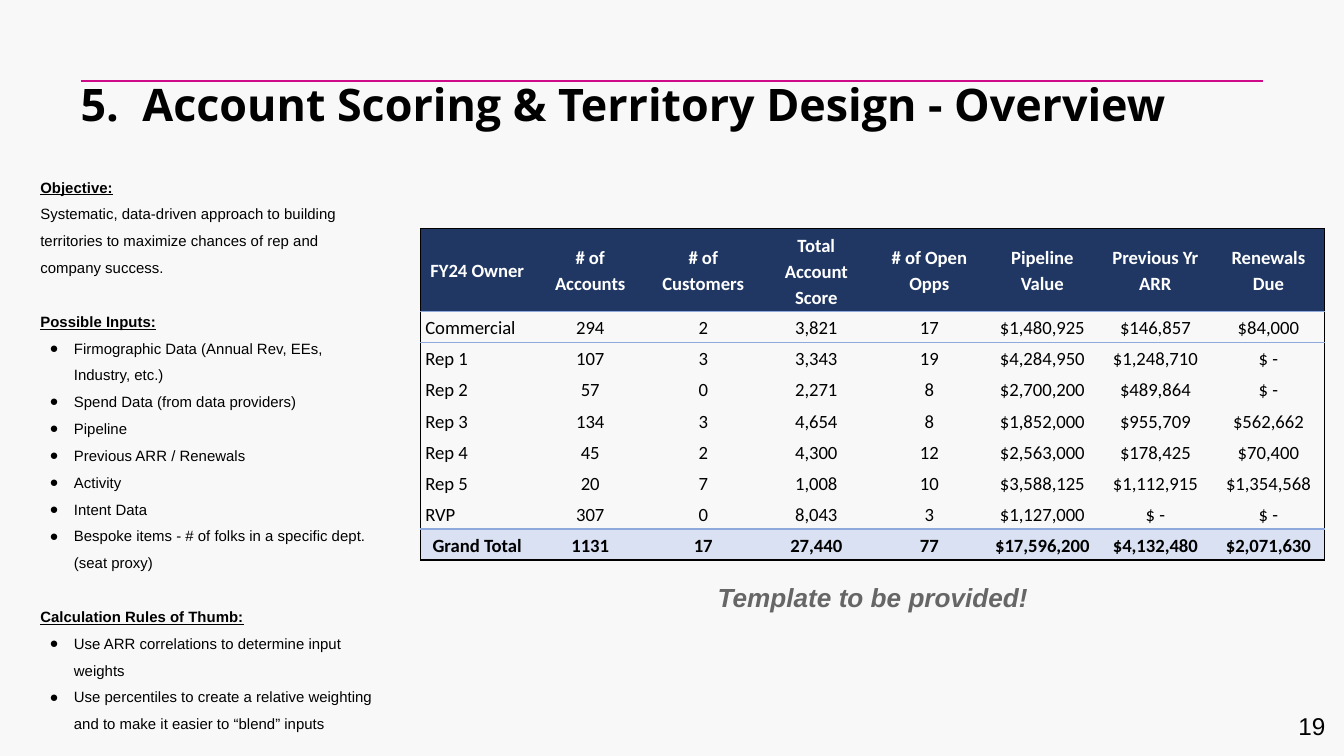
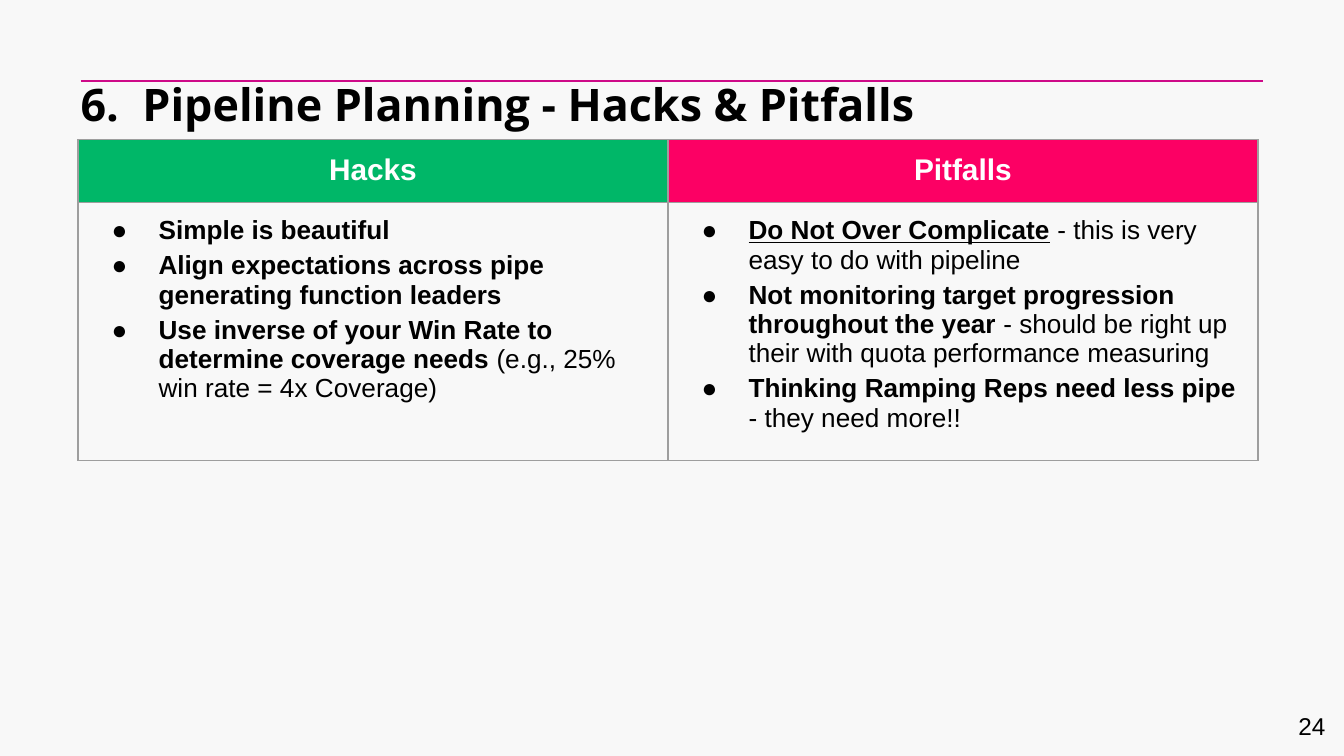
"""Build the territory design and pipeline planning slides."""
from lxml.etree import SubElement
from pptx import Presentation
from pptx.dml.color import RGBColor
from pptx.enum.shapes import MSO_CONNECTOR as CONN
from pptx.enum.text import MSO_ANCHOR as ANCHOR, MSO_AUTO_SIZE as AUTO, PP_ALIGN as ALIGN
from pptx.oxml.ns import qn
from pptx.util import Inches, Pt

COLORS = {
    "bg": "F8F8F8", "rule": "CE0A88", "text": "000000", "white": "FFFFFF",
    "navy": "203764", "total": "D9E1F2", "blue": "8EA9DB", "gray": "666666",
    "grid": "9E9E9E", "hacks": "00B768", "pitfalls": "FC0064",
}
NO_STYLE = "{2D5ABB26-0587-4C30-8999-92F81FD0307C}"
SIDES = {"l": "a:lnL", "r": "a:lnR", "t": "a:lnT", "b": "a:lnB"}

BASE = {"name": "Arial", "size": Pt(14), "bold": False, "color": "text"}
TITLE = {**BASE, "name": "Open Sans", "size": Pt(24), "bold": True}
NUMBER = {**BASE, "size": Pt(13)}
NOTE = {**BASE, "size": Pt(8)}
NOTE_HEAD = {**NOTE, "bold": True, "underline": True}
CAPTION = {**BASE, "bold": True, "italic": True, "color": "gray"}
STRONG = {**BASE, "bold": True}
STRESSED = {**STRONG, "underline": True}
COLUMN_HEAD = {**STRONG, "size": Pt(16), "color": "white"}
DATA = {**BASE, "name": "Calibri", "size": Pt(10)}
DATA_BOLD = {**DATA, "bold": True}
DATA_HEAD = {**DATA_BOLD, "color": "white"}

NOTES = [
    ("Objective:", ["Systematic, data-driven approach to building territories to "
                    "maximize chances of rep and company success."], False),
    ("Possible Inputs:", ["Firmographic Data (Annual Rev, EEs, Industry, etc.)",
                          "Spend Data (from data providers)", "Pipeline",
                          "Previous ARR / Renewals", "Activity", "Intent Data",
                          "Bespoke items - # of folks in a specific dept. (seat proxy)"], True),
    ("Calculation Rules of Thumb:", [
        "Use ARR correlations to determine input weights",
        "Use percentiles to create a relative weighting and to make it easier to “blend” inputs"], True),
]
OWNERS = [
    ["FY24 Owner", "# of Accounts", "# of Customers", "Total Account Score",
     "# of Open Opps", "Pipeline Value", "Previous Yr ARR", "Renewals Due"],
    ["Commercial", "294", "2", "3,821", "17", "$1,480,925", "$146,857", "$84,000"],
    ["Rep 1", "107", "3", "3,343", "19", "$4,284,950", "$1,248,710", "$ -"],
    ["Rep 2", "57", "0", "2,271", "8", "$2,700,200", "$489,864", "$ -"],
    ["Rep 3", "134", "3", "4,654", "8", "$1,852,000", "$955,709", "$562,662"],
    ["Rep 4", "45", "2", "4,300", "12", "$2,563,000", "$178,425", "$70,400"],
    ["Rep 5", "20", "7", "1,008", "10", "$3,588,125", "$1,112,915", "$1,354,568"],
    ["RVP", "307", "0", "8,043", "3", "$1,127,000", "$ -", "$ -"],
    ["Grand Total", "1131", "17", "27,440", "77", "$17,596,200", "$4,132,480", "$2,071,630"],
]
ADVICE = [
    ("Hacks", "hacks", [
        [("Simple is beautiful", STRONG)],
        [("Align expectations across pipe generating function leaders", STRONG)],
        [("Use inverse of your Win Rate to determine coverage needs ", STRONG),
         ("(e.g., 25% win rate = 4x Coverage)", BASE)]]),
    ("Pitfalls", "pitfalls", [
        [("Do Not Over Complicate", STRESSED), (" ", STRONG),
         ("- this is very easy to do with pipeline", BASE)],
        [("Not monitoring target progression throughout the year ", STRONG),
         ("- should be right up their with quota performance measuring", BASE)],
        [("Thinking Ramping Reps need less pipe ", STRONG), ("- they need more!!", BASE)]]),
]


def rgb(key):
    """Return the named colour."""
    return RGBColor.from_string(COLORS[key])


def set_attrs(obj, **values):
    """Set each given value on an object."""
    for key, value in values.items():
        setattr(obj, key, value)


def add_para(tf, runs, **layout):
    """Fill the first empty paragraph or a new one with (text, style) runs."""
    p = tf.paragraphs[0] if not tf.paragraphs[0].runs else tf.add_paragraph()
    for text, style in runs:
        r = p.add_run()
        r.text = text
        set_attrs(r.font, **{k: v for k, v in style.items() if k != "color"})
        r.font.color.rgb = rgb(style["color"])
    set_attrs(p, **layout)
    return p


def add_bullet(p, left, hanging):
    """Give a paragraph a round bullet with a hanging indent."""
    pPr = p._p.get_or_add_pPr()
    pPr.set("marL", str(Inches(left)))
    pPr.set("indent", str(-Inches(hanging)))
    clr = SubElement(pPr, qn("a:buClr"))
    SubElement(clr, qn("a:srgbClr"), val=COLORS["text"])
    SubElement(pPr, qn("a:buFont"), typeface=BASE["name"])
    SubElement(pPr, qn("a:buChar"), char="●")


def add_tab(p, pos):
    """Set one left tab stop."""
    tabs = SubElement(p._p.get_or_add_pPr(), qn("a:tabLst"))
    SubElement(tabs, qn("a:tab"), pos=str(Inches(pos)), algn="l")


def set_margins(obj, x, y):
    """Set horizontal and vertical insets of a frame or cell."""
    set_attrs(obj, margin_left=Inches(x), margin_right=Inches(x),
              margin_top=Inches(y), margin_bottom=Inches(y))


def add_text(s, box, inset=0.1, **layout):
    """Add a wrapping text box and return its frame."""
    tf = s.shapes.add_textbox(*map(Inches, box)).text_frame
    set_margins(tf, inset, inset)
    set_attrs(tf, word_wrap=True, **layout)
    return tf


def add_base(prs, number, title, page):
    """Add a slide with background, rule, numbered title and page number."""
    s = prs.slides.add_slide(prs.slide_layouts[6])
    s.background.fill.solid()
    s.background.fill.fore_color.rgb = rgb("bg")
    rule = s.shapes.add_connector(CONN.STRAIGHT, *map(Inches, (0.6, 0.6, 9.4, 0.6)))
    rule.line.color.rgb = rgb("rule")
    rule.line.width = Pt(1)
    SubElement(rule._element.spPr, qn("a:effectLst"))
    tf = add_text(s, (0.6, 0.57, 8.82, 0.4), 0, auto_size=AUTO.SHAPE_TO_FIT_TEXT)
    add_tab(add_para(tf, [(f"{number}.\t{title}", TITLE)]), 0.46)
    add_para(add_text(s, (9.36, 5.19, 0.6, 0.43)), [(page, NUMBER)], alignment=ALIGN.RIGHT)
    return s


def add_grid(s, left, top, widths, heights):
    """Add an unstyled table with the given column widths and row heights."""
    size = (sum(widths), sum(heights))
    frame = s.shapes.add_table(len(heights), len(widths), *map(Inches, (left, top, *size)))
    t = frame.table
    t._tbl.tblPr.find(qn("a:tableStyleId")).text = NO_STYLE
    set_attrs(t, first_row=False, horz_banding=False)
    for col, width in zip(t.columns, widths):
        col.width = Inches(width)
    for row, height in zip(t.rows, heights):
        row.height = Inches(height)
    return t


def style_cell(cell, borders, fill=None):
    """Draw the bordered sides of a cell, then fill it."""
    tcPr = cell._tc.get_or_add_tcPr()
    for side, tag in SIDES.items():
        if side in borders:
            ln = SubElement(tcPr, qn(tag), w=str(Pt(0.75)))
            solid = SubElement(ln, qn("a:solidFill"))
            SubElement(solid, qn("a:srgbClr"), val=COLORS[borders[side]])
    if fill:
        cell.fill.solid()
        cell.fill.fore_color.rgb = rgb(fill)
    else:
        cell.fill.background()


def add_notes(s):
    """Add the headed notes in the left column."""
    tf = add_text(s, (0.3, 1.26, 2.48, 4.17), 0, auto_size=AUTO.SHAPE_TO_FIT_TEXT)
    for i, (head, lines, bulleted) in enumerate(NOTES):
        add_para(tf, [(head, NOTE_HEAD)], line_spacing=1.5, space_before=Pt(14.4 if i else 0))
        for line in lines:
            p = add_para(tf, [(line, NOTE)], line_spacing=1.5)
            if bulleted:
                add_bullet(p, 0.25, 0.18)


def owner_borders(row, col, last_row, last_col):
    """Return the side colours of one cell of the owner table."""
    borders = {}
    if col == 0:
        borders["l"] = "text"
    if col == last_col:
        borders["r"] = "text"
    if row in (0, 1, last_row):
        borders["t"] = "blue" if row else "text"
    if row in (0, 1, last_row - 1, last_row):
        borders["b"] = "text" if row == last_row else "blue"
    return borders


def add_owner_table(s):
    """Add the account totals per owner."""
    last_row, last_col = len(OWNERS) - 1, len(OWNERS[0]) - 1
    columns = last_col + 1
    t = add_grid(s, 3.13, 1.7, [6.73 / columns] * columns, [0.41] + [0.23] * last_row)
    looks = {0: (DATA_HEAD, "navy"), last_row: (DATA_BOLD, "total")}
    for i, values in enumerate(OWNERS):
        style, fill = looks.get(i, (DATA, None))
        for j, value in enumerate(values):
            cell = t.cell(i, j)
            set_margins(cell, 2.5 / 72, 0.02)
            cell.vertical_anchor = ANCHOR.BOTTOM if i else ANCHOR.MIDDLE
            align = ALIGN.LEFT if j == 0 and i not in looks else ALIGN.CENTER
            add_para(cell.text_frame, [(value, style)], alignment=align, line_spacing=1.15)
            style_cell(cell, owner_borders(i, j, last_row, last_col), fill)


def add_advice_table(s):
    """Add the two columns of hacks and pitfalls."""
    t = add_grid(s, 0.58, 1.04, [4.39] * len(ADVICE), [0.42] * 2)
    for j, (head, fill, points) in enumerate(ADVICE):
        top, body = t.cell(0, j), t.cell(1, j)
        for cell, color in ((top, fill), (body, None)):
            set_margins(cell, 0.1, 0.1)
            style_cell(cell, dict.fromkeys(SIDES, "grid"), color)
        add_para(top.text_frame, [(head, COLUMN_HEAD)], alignment=ALIGN.CENTER)
        for i, runs in enumerate(points):
            p = add_para(body.text_frame, runs, space_before=Pt(3 if i else 0),
                         space_after=Pt(3 if i == len(points) - 1 else 0))
            add_bullet(p, 0.5, 0.35)


def main():
    """Build both slides and save them."""
    prs = Presentation()
    set_attrs(prs, slide_width=Inches(10), slide_height=Inches(10 * 9 / 16))
    s = add_base(prs, 5, "Account Scoring & Territory Design - Overview", "19")
    add_notes(s)
    add_owner_table(s)
    tf = add_text(s, (3.64, 4.29, 5.71, 0.3), vertical_anchor=ANCHOR.MIDDLE)
    add_para(tf, [("Template to be provided!", CAPTION)], alignment=ALIGN.CENTER)
    s = add_base(prs, 6, "Pipeline Planning - Hacks & Pitfalls", "24")
    add_advice_table(s)
    prs.save("out.pptx")


if __name__ == "__main__":
    main()
